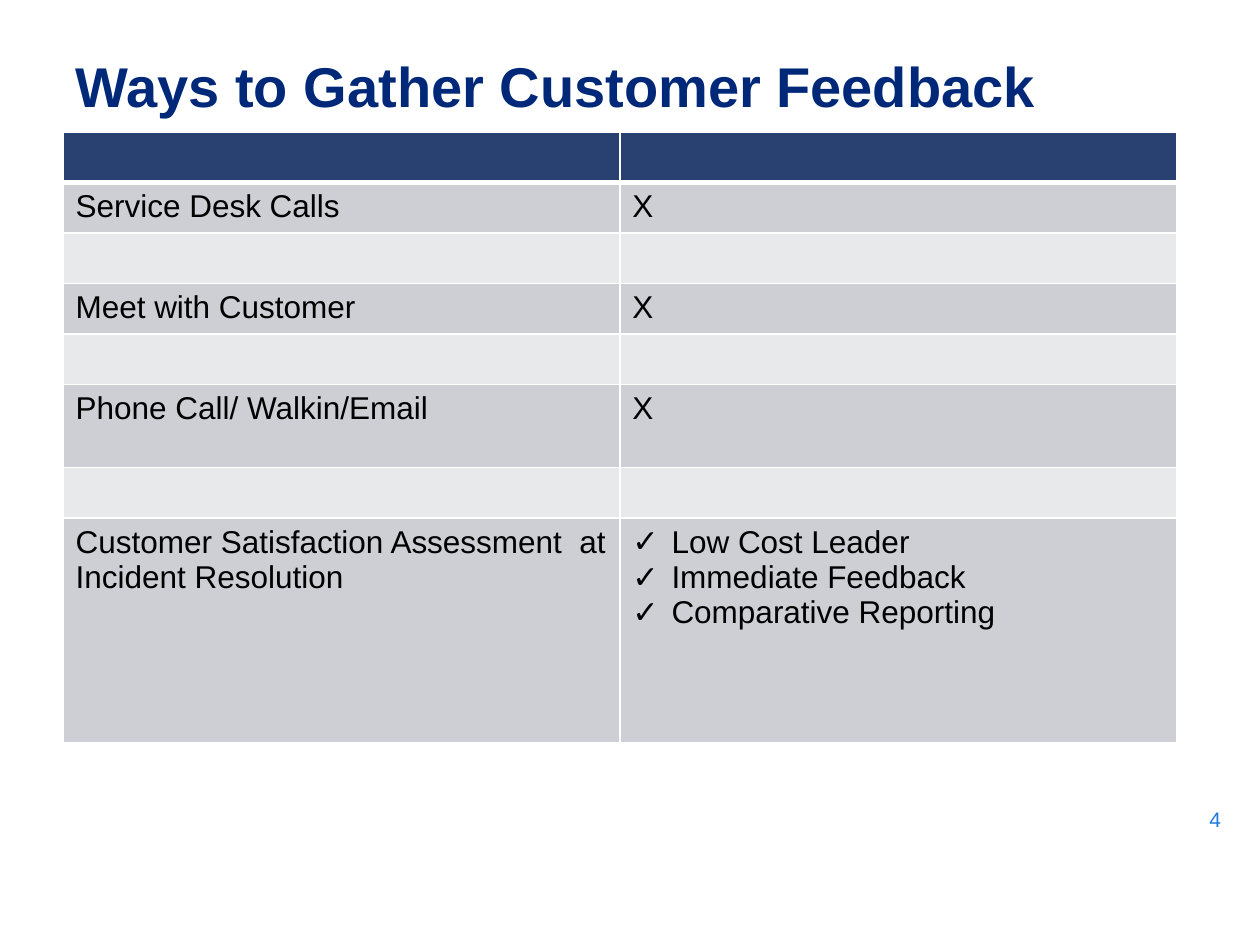
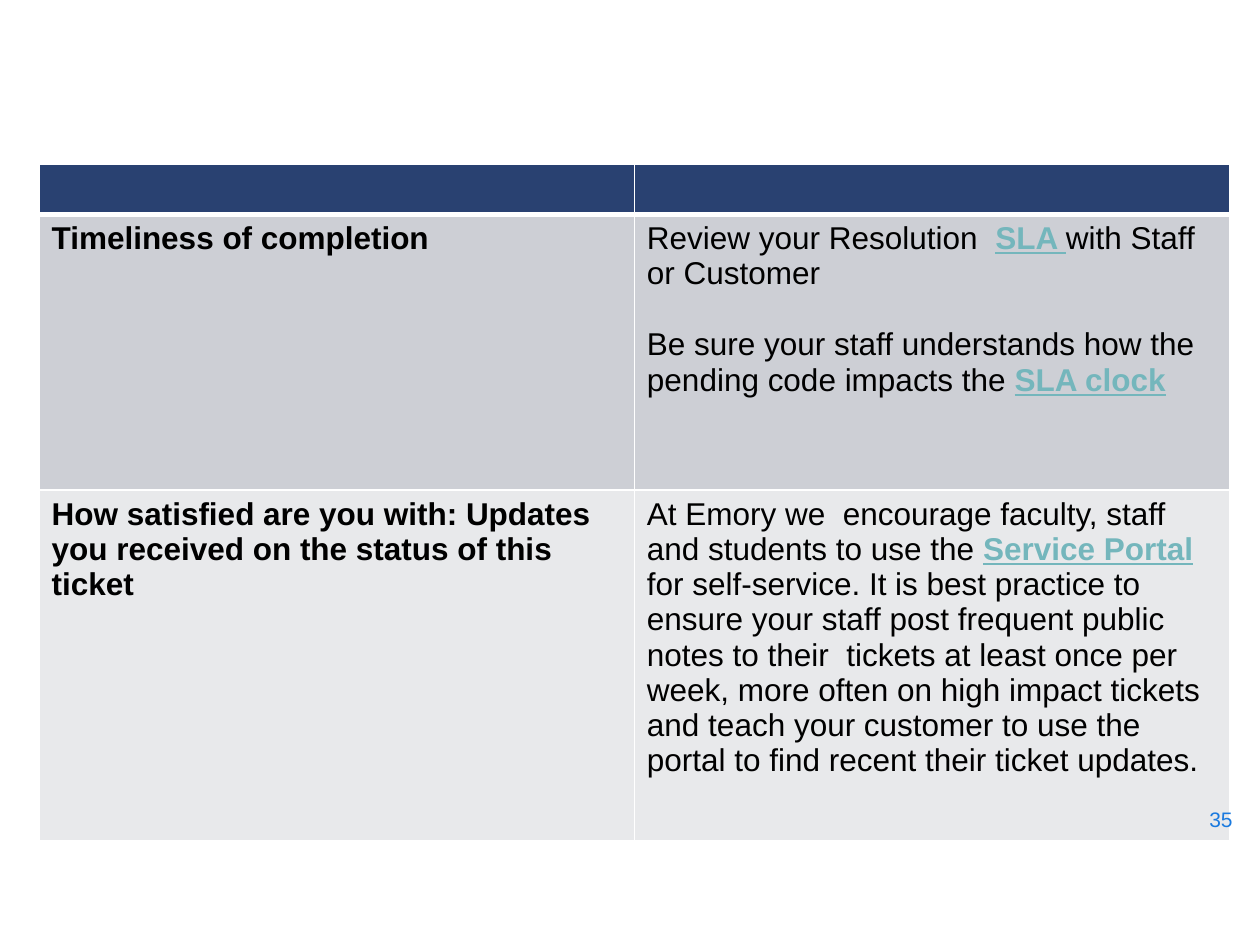
from dataclasses import dataclass

from lxml.etree import SubElement
from pptx import Presentation
from pptx.dml.color import RGBColor as Rgb
from pptx.enum.text import MSO_ANCHOR as Anchor, PP_ALIGN as Align
from pptx.oxml import parse_xml
from pptx.oxml.ns import nsdecls, qn
from pptx.util import Inches, Pt


@dataclass(frozen=True)
class Theme:
    font: str = "Arial"
    title: str = "002878"
    number: str = "1A7ADF"
    text: str = "000000"
    link: str = "74B6BC"
    head: str = "294171"
    bands: tuple[str, str] = ("CDCFD5", "E8E9EB")
    rule: str = "FFFFFF"
    title_size: int = 32
    text_size: int = 18
    number_size: int = 12
    thin: int = 1
    thick: int = 3
    gap: float = 20.7  # one empty line of table text


@dataclass(frozen=True)
class Bit:
    text: str
    bold: bool = False
    link: bool = False


@dataclass(frozen=True)
class Para:
    bits: tuple[Bit, ...]
    check: bool = False
    gap: bool = False


@dataclass(frozen=True)
class Grid:
    left: float
    top: float
    width: float
    heights: tuple[float, ...]
    rows: tuple[tuple[tuple[Para, ...], ...], ...]


THEME = Theme()


def plain(text: str, **kind: bool) -> Para:
    return Para((Bit(text),), **kind)


def bold(text: str) -> Para:
    return Para((Bit(text, bold=True),))


def link(text: str) -> Bit:
    return Bit(text, bold=True, link=True)


def style(font, size: int, color: str, heavy: bool = False) -> None:
    font.name, font.size, font.bold = THEME.font, Pt(size), heavy
    font.color.rgb = Rgb.from_string(color)


def add_title(slide, text: str) -> None:
    title = slide.shapes.title
    title.left, title.top = Inches(0.5), Inches(0.3)
    title.width, title.height = Inches(9), Inches(0.75)
    frame = title.text_frame
    frame.text = text
    frame.vertical_anchor = Anchor.MIDDLE
    para = frame.paragraphs[0]
    para.alignment = Align.LEFT
    style(para.runs[0].font, THEME.title_size, THEME.title, True)


def add_number(slide, number: int) -> None:
    box = slide.shapes.add_textbox(Inches(9.5), Inches(6.3), Inches(0.5), Inches(0.4))
    frame = box.text_frame
    frame.word_wrap = True
    frame.vertical_anchor = Anchor.MIDDLE
    frame.text = str(number)
    style(frame.paragraphs[0].runs[0].font, THEME.number_size, THEME.number)


def add_check(para) -> None:
    props = para._p.get_or_add_pPr()
    props.set("marL", str(Inches(0.31)))
    props.set("indent", str(Inches(-0.31)))
    SubElement(props, qn("a:buFont"), typeface=THEME.font)
    SubElement(props, qn("a:buChar"), char="✓")


def add_rules(cell, row: int) -> None:
    """Border the cell, with a thick rule between header and body."""
    widths = {
        "L": THEME.thin,
        "R": THEME.thin,
        "T": THEME.thick if row == 1 else THEME.thin,
        "B": THEME.thick if row == 0 else THEME.thin,
    }
    props = cell._tc.get_or_add_tcPr()
    for spot, (side, width) in enumerate(widths.items()):
        props.insert(spot, parse_xml(
            f'<a:ln{side} {nsdecls("a")} w="{Pt(width)}"><a:solidFill>'
            f'<a:srgbClr val="{THEME.rule}"/></a:solidFill></a:ln{side}>'))


def fill_text(frame, paras: tuple[Para, ...]) -> None:
    for spot, item in enumerate(paras):
        para = frame.add_paragraph() if spot else frame.paragraphs[0]
        if item.check:
            add_check(para)
        if item.gap:
            para.space_before = Pt(THEME.gap)
        for bit in item.bits:
            run = para.add_run()
            run.text = bit.text
            color = THEME.link if bit.link else THEME.text
            style(run.font, THEME.text_size, color, bit.bold)
            if bit.link:
                run.font.underline = True


def add_grid(slide, grid: Grid) -> None:
    count = len(grid.heights)
    table = slide.shapes.add_table(
        count, 2, Inches(grid.left), Inches(grid.top),
        Inches(grid.width), Inches(sum(grid.heights))).table
    for row, height in enumerate(grid.heights):
        table.rows[row].height = Inches(height)
        color = THEME.bands[(row - 1) % 2] if row else THEME.head
        for col, paras in enumerate(grid.rows[row]):
            cell = table.cell(row, col)
            cell.fill.solid()
            cell.fill.fore_color.rgb = Rgb.from_string(color)
            add_rules(cell, row)
            fill_text(cell.text_frame, paras)


# Table contents
EMPTY = ((), ())
CROSS = (plain("X"),)
PERKS = ("Low Cost Leader", "Immediate Feedback", "Comparative Reporting")

WAYS = Grid(0.5, 1.05, 8.84, (0.38,) * 5 + (0.66, 0.38, 1.78), (
    EMPTY,
    ((plain("Service Desk Calls"),), CROSS),
    EMPTY,
    ((plain("Meet with Customer"),), CROSS),
    EMPTY,
    ((plain("Phone Call/ Walkin/Email"),), CROSS),
    EMPTY,
    ((plain("Customer Satisfaction Assessment  at Incident Resolution"),),
     tuple(plain(perk, check=True) for perk in PERKS)),
))

TIPS = Grid(0.31, 1.3, 9.45, (0.4, 2.19, 2.78), (
    EMPTY,
    ((bold("Timeliness of completion"),), (
        Para((Bit("Review your Resolution  "), link("SLA "),
              Bit("with Staff or Customer"))),
        Para((Bit("Be sure your staff understands how the pending code impacts the "),
              link("SLA clock")), gap=True),
    )),
    ((bold("How satisfied are you with: Updates you received on the status "
           "of this ticket"),), (
        Para((Bit("At Emory we  encourage faculty, staff and students to use the "),
              link("Service Portal"),
              Bit(" for self-service. It is best practice to ensure your staff post "
                  "frequent public notes to their  tickets at least once per week, "
                  "more often on high impact tickets and teach your customer to use "
                  "the portal to find recent their ticket updates."))),
    )),
))


def main() -> None:
    deck = Presentation()
    deck.slide_width, deck.slide_height = Inches(10), Inches(7.5)
    titled, blank = deck.slide_layouts[5], deck.slide_layouts[6]

    # Ways to gather feedback
    slide = deck.slides.add_slide(titled)
    add_title(slide, "Ways to Gather Customer Feedback")
    add_number(slide, 4)
    add_grid(slide, WAYS)

    # Tips for each survey question
    slide = deck.slides.add_slide(blank)
    add_grid(slide, TIPS)
    add_number(slide, 35)

    deck.save("out.pptx")


if __name__ == "__main__":
    main()
